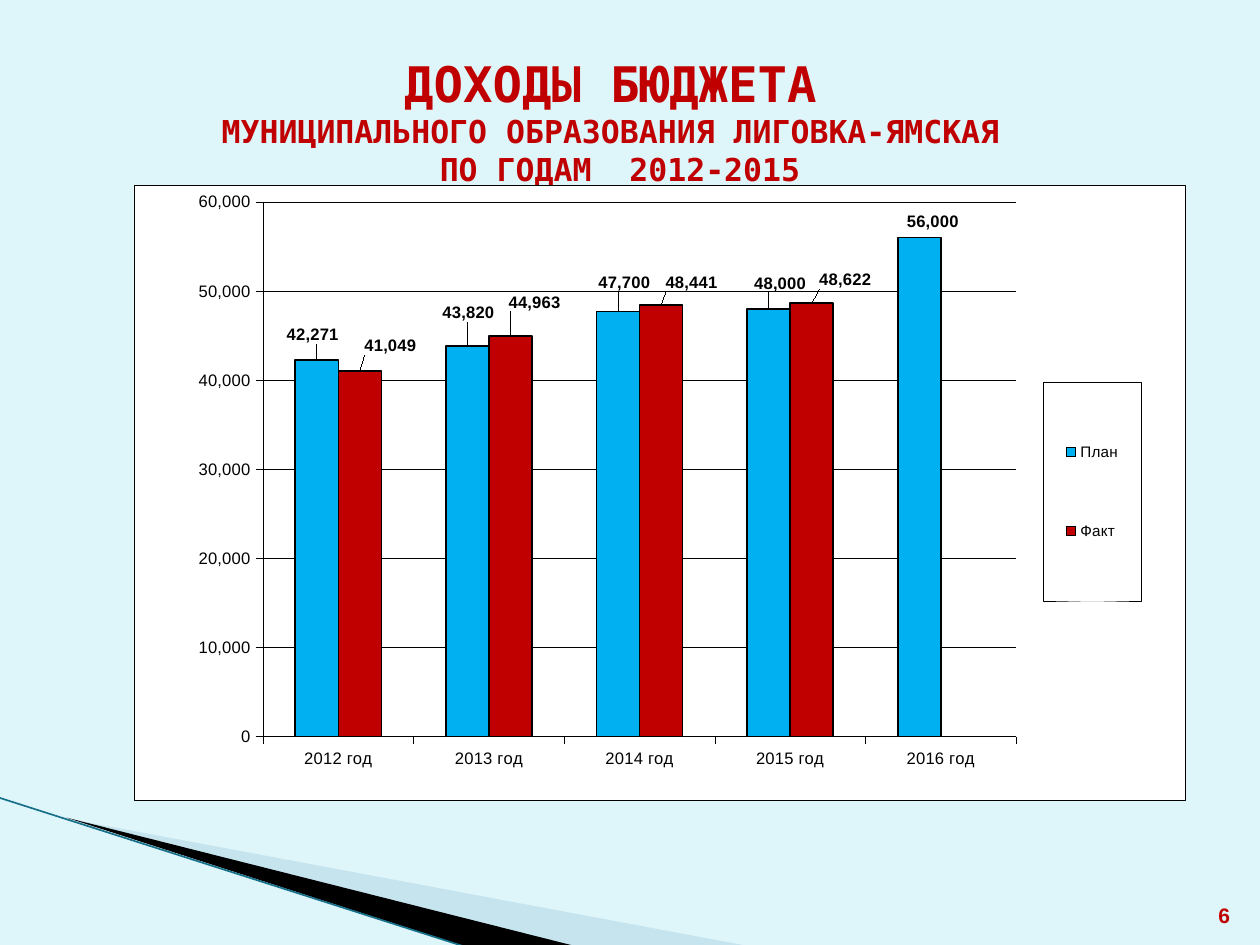
from lxml.etree import SubElement
from pptx import Presentation
from pptx.chart.data import CategoryChartData
from pptx.dml.color import RGBColor
from pptx.enum.chart import (XL_CHART_TYPE, XL_LABEL_POSITION, XL_LEGEND_POSITION,
                             XL_TICK_LABEL_POSITION, XL_TICK_MARK)
from pptx.enum.shapes import MSO_CONNECTOR
from pptx.enum.text import MSO_ANCHOR, PP_ALIGN
from pptx.oxml import parse_xml
from pptx.oxml.ns import nsdecls, qn
from pptx.util import Inches, Pt

RED, BLUE, BLACK, WHITE = "C00000", "00B0F0", "000000", "FFFFFF"
COLUMNS, ROWS = 100, 75

YEARS = [f"{year} год" for year in range(2012, 2017)]
# name, fill, values, label offsets as shares of the chart's width and height
SERIES = [
    ("План", BLUE, [42271, 43820, 47700, 48000, 56000],
     [(-0.004, -0.017), (0.001, -0.03), (0.006, -0.023), (0.011, -0.018), (0.013, -0.002)]),
    ("Факт", RED, [41049, 44963, 48441, 48622, None],
     [(0.029, -0.017), (0.023, -0.031), (0.029, -0.012), (0.032, -0.015)]),
]


def rgb(color):
    return RGBColor.from_string(color)


def format_font(font, size, color=BLACK, bold=False, face="Arial"):
    font.size, font.bold, font.name = Pt(size), bold, face
    font.color.rgb = rgb(color)


def write(paragraph, text, align=PP_ALIGN.LEFT, **style):
    paragraph.alignment = align
    run = paragraph.add_run()
    run.text = text
    format_font(run.font, **style)


def format_line(line, color, width):
    line.color.rgb = rgb(color)
    line.width = Pt(width)


def manual_layout(**settings):
    """Chart layout element; keyword order follows the schema."""
    items = "".join(f'<c:{name} val="{value}"/>' for name, value in settings.items())
    return parse_xml(f'<c:layout {nsdecls("c")}><c:manualLayout>{items}'
                     '</c:manualLayout></c:layout>')


def outlined_area(color):
    return parse_xml(f'<c:spPr {nsdecls("c", "a")}><a:solidFill><a:srgbClr val="{color}"/>'
                     f'</a:solidFill><a:ln w="3175"><a:solidFill><a:srgbClr val="{BLACK}"/>'
                     '</a:solidFill></a:ln></c:spPr>')


class SlideBuilder:
    """Holds the slide, its grid and the heading style."""
    heading = {"color": RED, "bold": True, "face": "DejaVu Sans Mono"}

    def __init__(self, deck, background):
        self.column = deck.slide_width / COLUMNS
        self.row = deck.slide_height / ROWS
        self.slide = deck.slides.add_slide(deck.slide_layouts[5])
        self.shapes = self.slide.shapes
        self.slide.background.fill.solid()
        self.slide.background.fill.fore_color.rgb = rgb(background)

    def place(self, *lengths):
        """Turn alternating columns and rows into slide lengths."""
        return [round(length * (self.row if i % 2 else self.column))
                for i, length in enumerate(lengths)]

    def wedge(self, points, color, opacity=100):
        corners = [self.place(*point) for point in points]
        outline = self.shapes.build_freeform(*corners[0])
        outline.add_line_segments(corners[1:], close=True)
        shape = outline.convert_to_shape()
        shape.shadow.inherit = False
        shape.line.fill.background()
        shape.fill.solid()
        shape.fill.fore_color.rgb = rgb(color)
        if opacity < 100:
            fill_color = shape.fill._xPr.find(".//" + qn("a:srgbClr"))
            SubElement(fill_color, qn("a:alpha"), val=str(opacity * 1000))

    def stroke(self, start, end, color, width):
        line = self.shapes.add_connector(MSO_CONNECTOR.STRAIGHT,
                                         *self.place(*start), *self.place(*end))
        format_line(line.line, color, width)
        SubElement(line._element.spPr, qn("a:effectLst"))

    def title(self, lines, *box):
        title = self.shapes.title
        title.left, title.top, title.width, title.height = self.place(*box)
        frame = title.text_frame
        frame.word_wrap, frame.vertical_anchor = True, MSO_ANCHOR.BOTTOM
        for i, (text, size) in enumerate(lines):
            paragraph = frame.add_paragraph() if i else frame.paragraphs[0]
            write(paragraph, text, PP_ALIGN.CENTER, size=size, **self.heading)

    def page_number(self, number, *box):
        frame = self.shapes.add_textbox(*self.place(*box)).text_frame
        frame.word_wrap, frame.vertical_anchor = True, MSO_ANCHOR.BOTTOM
        write(frame.paragraphs[0], number, PP_ALIGN.RIGHT, size=12, color=RED, bold=True)

    def column_chart(self, *box):
        data = CategoryChartData(number_format="#,##0")
        data.categories = YEARS
        for name, _, values, _ in SERIES:
            data.add_series(name, values)
        chart = self.shapes.add_chart(XL_CHART_TYPE.COLUMN_CLUSTERED,
                                      *self.place(*box), data).chart
        chart.has_title = False
        format_font(chart.font, 9.5)
        chart._chartSpace.chart.addnext(outlined_area(WHITE))
        plot_area = chart._chartSpace.chart.plotArea
        for old_layout in plot_area.findall(qn("c:layout")):
            plot_area.remove(old_layout)
        plot_area.insert(0, manual_layout(layoutTarget="inner", xMode="edge", yMode="edge",
                                          x=0.123, y=0.027, w=0.716, h=0.87))
        self.format_axes(chart)
        self.format_legend(chart)
        plot = chart.plots[0]
        plot.gap_width, plot.overlap, plot.vary_by_categories = 150, 0, False
        for series, (_, color, _, offsets) in zip(plot.series, SERIES):
            self.format_series(series, color, offsets)

    def format_axes(self, chart):
        for axis in (chart.category_axis, chart.value_axis):
            format_font(axis.tick_labels.font, 9.5)
            format_line(axis.format.line, BLACK, 0.25)
            axis.major_tick_mark = XL_TICK_MARK.OUTSIDE
        chart.category_axis.tick_label_position = XL_TICK_LABEL_POSITION.LOW
        amounts = chart.value_axis
        amounts.minimum_scale, amounts.maximum_scale, amounts.major_unit = 0, 60000, 10000
        amounts.tick_labels.number_format = "#,##0"
        amounts.tick_labels.number_format_is_linked = False
        format_line(amounts.major_gridlines.format.line, BLACK, 0.25)

    def format_legend(self, chart):
        chart.has_legend = True
        legend = chart.legend
        legend.position, legend.include_in_layout = XL_LEGEND_POSITION.RIGHT, False
        format_font(legend.font, 8.7)
        element = legend._element
        for old_layout in element.findall(qn("c:layout")):
            element.remove(old_layout)
        element.find(qn("c:legendPos")).addnext(manual_layout(
            xMode="edge", yMode="edge", x=0.865, y=0.32, w=0.093, h=0.356))
        element.find(qn("c:overlay")).addnext(outlined_area(WHITE))

    def format_series(self, series, color, offsets):
        series.format.fill.solid()
        series.format.fill.fore_color.rgb = rgb(color)
        format_line(series.format.line, BLACK, 1)
        labels = series.data_labels
        labels.show_value, labels.position = True, XL_LABEL_POSITION.OUTSIDE_END
        labels.number_format, labels.number_format_is_linked = "#,##0", False
        format_font(labels.font, 9.5, bold=True)
        for i, (x, y) in enumerate(offsets):
            label = series.points[i].data_label
            format_font(label.font, 9.5, bold=True)
            label.position = XL_LABEL_POSITION.OUTSIDE_END
        for element, (x, y) in zip(labels._element.findall(qn("c:dLbl")), offsets):
            element.find(qn("c:idx")).addnext(manual_layout(x=x, y=y))


def main():
    deck = Presentation()
    deck.slide_width, deck.slide_height = Inches(10), Inches(7.5)
    page = SlideBuilder(deck, "DEF5FA")
    page.wedge([(5.5, 65), (59.5, 75.1), (45.6, 75.1)], "A0CBDC", opacity=40)
    page.wedge([(5.3, 64.9), (45.7, 75.1), (37.2, 75.2)], BLACK)
    page.stroke((-0.1, 63.3), (37.1, 75.2), "16708A", 0.95)
    page.page_number("6", 94.6, 70.1, 4, 4)
    page.title([(" ДОХОДЫ БЮДЖЕТА ", 28),
                ("МУНИЦИПАЛЬНОГО ОБРАЗОВАНИЯ ЛИГОВКА-ЯМСКАЯ", 18),
                (" ПО ГОДАМ  2012-2015", 18)], 5.9, 3.6, 85.1, 11.8)
    page.column_chart(10.6, 14.7, 83.5, 48.8)
    deck.save("out.pptx")


if __name__ == "__main__":
    main()
